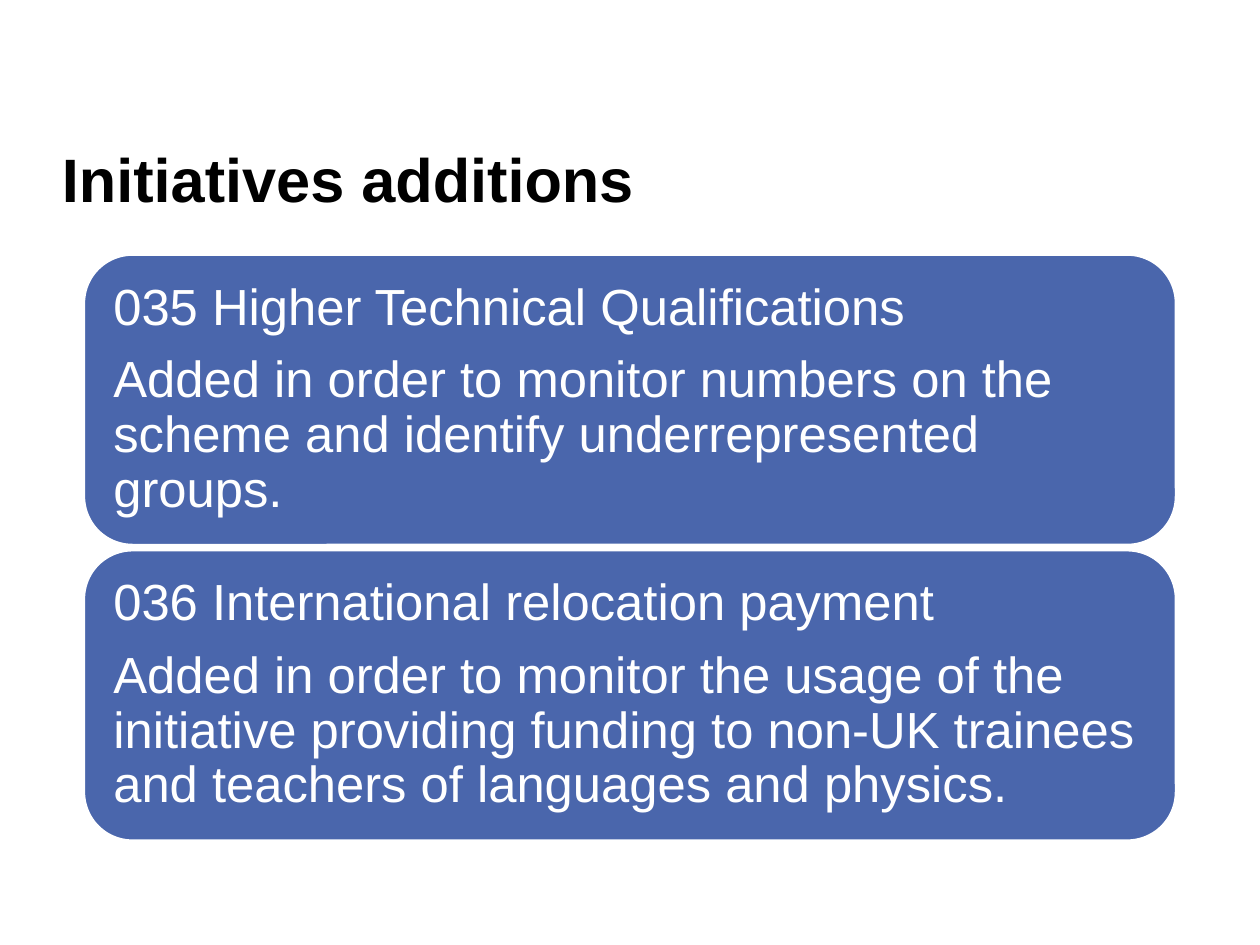
from pptx import Presentation
from pptx.dml.color import RGBColor
from pptx.enum.shapes import MSO_SHAPE as Shape
from pptx.enum.text import MSO_ANCHOR as Anchor, PP_ALIGN as Align
from pptx.util import Cm, Pt

WHITE = "FFFFFF"
BLUE = "4A66AC"
BLACK = "000000"
CARD_TOP = 5.14
CARD_HEIGHT = 5.84
CARD_GAP = 0.12
INITIATIVES = [
    ("035 Higher Technical Qualifications",
     "Added in order to monitor numbers on the scheme and identify "
     "underrepresented groups."),
    ("036 International relocation payment",
     "Added in order to monitor the usage of the initiative providing funding "
     "to non-UK trainees and teachers of languages and physics."),
]


def color(value):
    """Turn a hex string into a colour."""
    return RGBColor.from_string(value)


def style_paragraph(paragraph, size, font_color, bold=False):
    """Set the font, alignment and line spacing of a paragraph."""
    paragraph.alignment = Align.LEFT
    paragraph.line_spacing = 0.9
    font = paragraph.font
    font.name, font.size, font.bold = "Arial", Pt(size), bold
    font.color.rgb = color(font_color)


def add_title(slide, text):
    """Add the bold slide title."""
    box = slide.shapes.add_textbox(Cm(1), Cm(2.74), Cm(21.13), Cm(1.88))
    frame = box.text_frame
    frame.word_wrap = True
    frame.vertical_anchor = Anchor.MIDDLE
    frame.text = text
    style_paragraph(frame.paragraphs[0], 35, BLACK, bold=True)


def add_card(slide, top, lines):
    """Add a rounded card holding one paragraph per line."""
    card = slide.shapes.add_shape(
        Shape.ROUNDED_RECTANGLE, Cm(1.7), Cm(top), Cm(22), Cm(CARD_HEIGHT))
    card.shadow.inherit = False
    card.fill.solid()
    card.fill.fore_color.rgb = color(BLUE)
    card.line.color.rgb = color(WHITE)
    card.line.width = Pt(1)
    frame = card.text_frame
    frame.word_wrap = True
    frame.vertical_anchor = Anchor.MIDDLE
    frame.margin_left = frame.margin_right = Cm(0.3)
    frame.margin_top = frame.margin_bottom = Cm(0.3)
    frame.text = "\n".join(lines)
    for paragraph in frame.paragraphs:
        style_paragraph(paragraph, 29, WHITE)
        paragraph.space_after = Pt(10)


def main():
    """Build and save the slide."""
    presentation = Presentation()
    presentation.slide_width, presentation.slide_height = Cm(25.4), Cm(19.05)
    slide = presentation.slides.add_slide(presentation.slide_layouts[6])
    add_title(slide, "Initiatives additions")
    for index, lines in enumerate(INITIATIVES):
        add_card(slide, CARD_TOP + index * (CARD_HEIGHT + CARD_GAP), lines)
    presentation.save("out.pptx")


if __name__ == "__main__":
    main()
